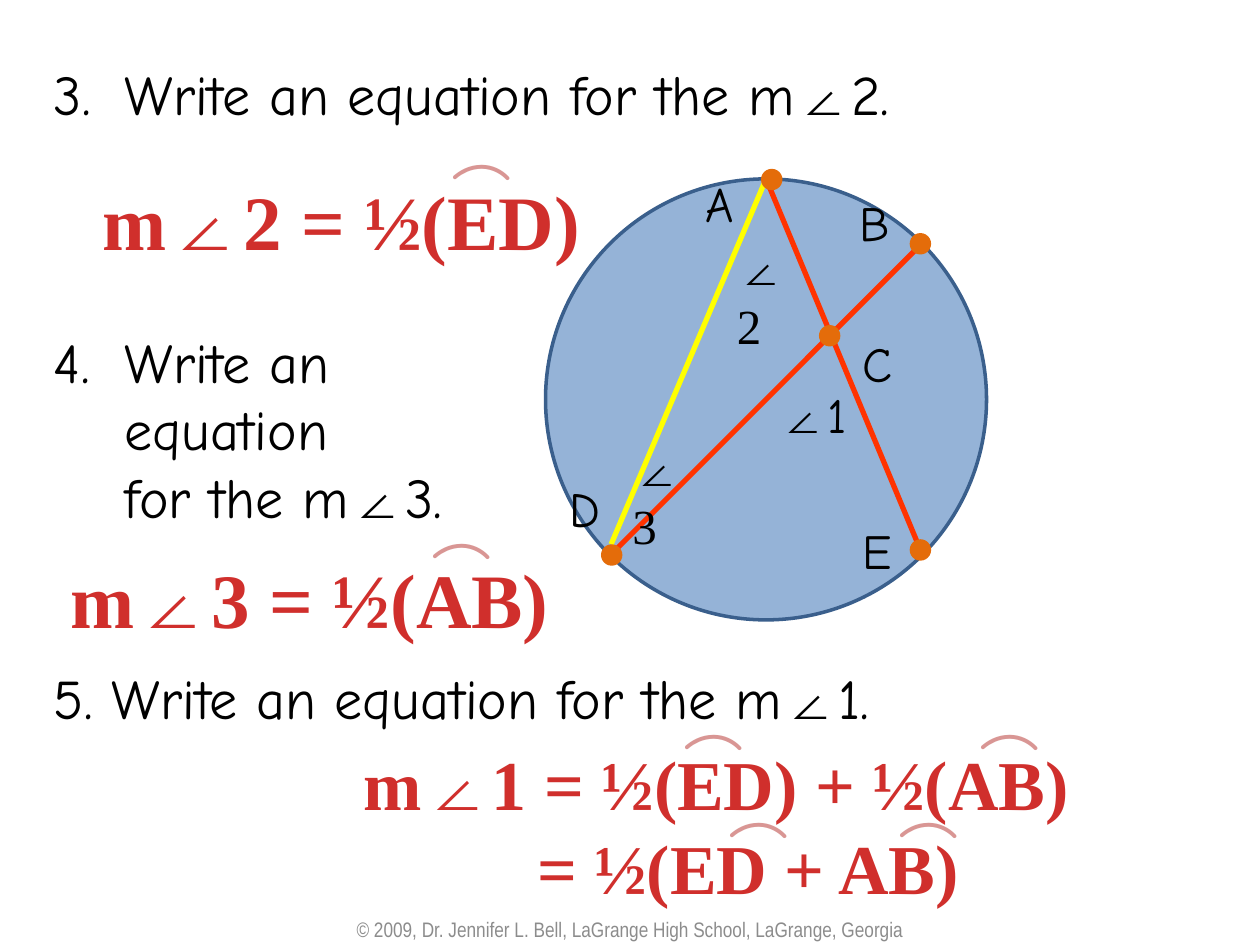
from lxml import etree
from pptx import Presentation
from pptx.dml.color import RGBColor
from pptx.enum import shapes, text
from pptx.oxml import ns
from pptx.util import Inches, Pt

HAND, SERIF, NARROW = "Comic Neue", "Times New Roman", "Arial Narrow"
BLACK, RED, PINK, GREY = "000000", "D02F2C", "D99694", "8C8C8C"
ANGLE = "∠"

QUESTIONS = [
    (["Write an equation for the m", ANGLE, "2."], "number", 0),
    (["Write an"], "number", 115),
    (["equation"], "continued", 0),
    (["for the m", ANGLE, "3."], "continued", 0),
    (["5. Write an equation for the m", ANGLE, "1."], "hanging", 76.5),
]
CIRCLE = (4.33, 1.42, 3.5)
CHORDS = [
    ((4.85, 4.4), (7.32, 1.93), "FF3300"),
    ((7.32, 4.4), (6.08, 1.42), "FF3300"),
    ((6.08, 1.42), (4.85, 4.32), "FFFF00"),
]
POINTS = {
    "C": ((6.5, 2.58), (6.75, 2.6)),
    "B": ((7.22, 1.85), (6.72, 1.48)),
    "D": ((4.77, 4.32), (4.42, 3.75)),
    "E": ((7.22, 4.28), (6.75, 4.08)),
    "A": ((6.04, 1.34), (5.5, 1.33)),
}
ANGLES = [
    ([ANGLE, "1"], (6.08, 3)),
    ([ANGLE + "2"], (5.75, 1.83)),
    ([ANGLE + "3"], (4.92, 3.42)),
]
ANSWERS = [
    (["m∠2 = ½(ED) "], 44, (0.64, 1.33, 4.14, 0.84), [(3.19, 1.49)]),
    (["m∠3 = ½(AB) "], 44, (0.39, 4.33, 4.14, 0.84), [(3.03, 4.5)]),
    (["m∠1 = ½(ED) + ½(AB) ", "\t= ½(ED + AB) "], 40, (2.75, 5.83, 6.01, 1.48),
     [(5.03, 6.01), (7.38, 6.01), (5.39, 6.71), (6.74, 6.71)]),
]
CREDIT = "© 2009, Dr. Jennifer L. Bell, LaGrange High School, LaGrange, Georgia"

prs = Presentation()
prs.slide_width, prs.slide_height = Inches(10), Inches(7.5)
slide = prs.slides.add_slide(prs.slide_layouts[6])


def color(value):
    return RGBColor.from_string(value)


def add_frame(left, top, width, height, wrap=True, rotation=0, grow=True):
    box = slide.shapes.add_textbox(*map(Inches, (left, top, width, height)))
    box.rotation = rotation
    frame = box.text_frame
    frame.word_wrap = wrap
    if grow:
        frame.auto_size = text.MSO_AUTO_SIZE.SHAPE_TO_FIT_TEXT
    return frame


def write(frame, parts, size, font, ink=BLACK, bold=None, centred=False, first=True):
    paragraph = frame.paragraphs[0] if first else frame.add_paragraph()
    paragraph.font.size = Pt(size)
    paragraph.font.color.rgb = color(ink)
    paragraph.font.bold = bold
    if centred:
        paragraph.alignment = text.PP_ALIGN.CENTER
    if len(parts) == 1:
        paragraph.font.name = font
    for part in parts:
        run = paragraph.add_run()
        run.text = part
        if len(parts) > 1:
            run.font.name = SERIF if part == ANGLE else font
    return paragraph


def add_ellipse(left, top, size, fill, outline=None):
    oval = slide.shapes.add_shape(
        shapes.MSO_SHAPE.OVAL, *map(Inches, (left, top, size, size)))
    oval.shadow.inherit = False
    oval.fill.solid()
    oval.fill.fore_color.rgb = color(fill)
    if outline:
        oval.line.color.rgb = color(outline)
        oval.line.width = Pt(2)
    else:
        oval.line.fill.background()


def add_chord(start, end, ink):
    chord = slide.shapes.add_connector(
        shapes.MSO_CONNECTOR.STRAIGHT, *map(Inches, start + end))
    chord.line.color.rgb = color(ink)
    chord.line.width = Pt(3)
    etree.SubElement(chord._element.spPr, ns.qn("a:effectLst"))


questions = add_frame(0.33, 0.42, 9.67, 5.59)
for index, (parts, layout, gap) in enumerate(QUESTIONS):
    paragraph = write(questions, parts, 32, HAND, first=index == 0)
    paragraph.space_before = Pt(gap)
    properties = paragraph._p.get_or_add_pPr()
    properties.set("marL", str(Inches(0.56)))
    properties.set("indent", str(0 if layout == "continued" else Inches(-0.56)))
    if layout == "number":
        bullet = etree.Element(ns.qn("a:buAutoNum"), type="arabicPeriod", startAt="3")
        properties.find(ns.qn("a:defRPr")).addprevious(bullet)

add_ellipse(*CIRCLE, "95B3D7", "3A5F8C")
for chord in CHORDS:
    add_chord(*chord)
for letter, (dot, label) in POINTS.items():
    add_ellipse(*dot, 0.17, "E46C0A")
    write(add_frame(*label, 0.5, 0.57), [letter], 28, HAND)
for parts, place in ANGLES:
    font = HAND if len(parts) > 1 else SERIF
    write(add_frame(*place, 0.75, 0.57), parts, 28, font)

for lines, size, place, arcs in ANSWERS:
    answer = add_frame(*place, wrap=False)
    for index, line in enumerate(lines):
        write(answer, [line], size, SERIF, RED, True, True, index == 0)
    for arc in arcs:
        write(add_frame(*arc, 1.32, 0.71, rotation=90), ["("], 36, HAND, PINK)

footer = add_frame(0, 7.25, 10, 0.25, grow=False)
footer.vertical_anchor = text.MSO_ANCHOR.MIDDLE
write(footer, [CREDIT], 12, NARROW, GREY, centred=True)

prs.save("out.pptx")
